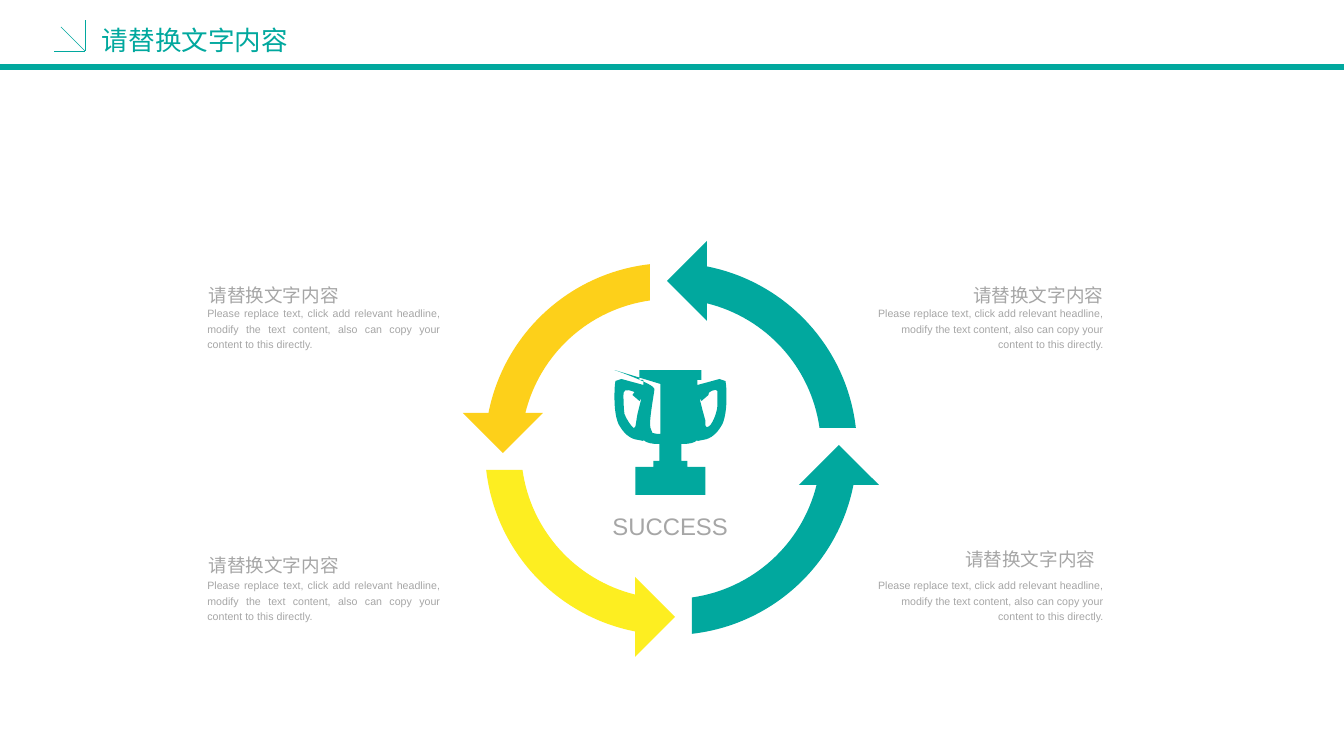
from dataclasses import dataclass
from math import acos, asin, cos, sin, tan

from lxml import etree
from pptx import Presentation
from pptx import util as u
from pptx.dml.color import RGBColor
from pptx.enum import shapes, text
from pptx.oxml.ns import qn

PX = 9565  # EMU in one px


@dataclass(frozen=True)
class Theme:
    teal: str = "01A89E"
    yellow: str = "FDEE21"
    amber: str = "FDD01A"
    grey: str = "A6A6A6"
    font: str = "Arial"
    title: int = 20
    label: int = 18
    heading: int = 14
    body: int = 8


T = Theme()
LEFT, RIGHT, JUSTIFY = (text.PP_ALIGN.LEFT, text.PP_ALIGN.RIGHT,
                        text.PP_ALIGN.JUSTIFY)
HEADING = "请替换文字内容"
BODY = ("Please replace text, click add relevant headline, modify the text "
        "content, also can copy your content to this directly.")


def px(n):
    return round(n * PX)


def apply(obj, values):
    for name, value in values.items():
        setattr(obj, name, value)


def add_text(s, box, words, size, color=T.grey, align=LEFT, wrap=True, frame=None):
    tf = s.shapes.add_textbox(*map(px, box)).text_frame
    apply(tf, {"word_wrap": wrap,
               "auto_size": text.MSO_AUTO_SIZE.SHAPE_TO_FIT_TEXT, **(frame or {})})
    p = tf.paragraphs[0]
    apply(p, {"alignment": align, "line_spacing": 1.2})
    r = p.add_run()
    r.text = words
    apply(r.font, {"name": T.font, "size": u.Pt(size)})
    r.font.color.rgb = RGBColor.from_string(color)


def add_line(s, x1, y1, x2, y2, width):
    c = s.shapes.add_connector(shapes.MSO_CONNECTOR.STRAIGHT,
                               *map(px, (x1, y1, x2, y2)))
    c.line.width = u.Pt(width)
    c.line.color.rgb = RGBColor.from_string(T.teal)
    etree.SubElement(c._element.spPr, qn("a:effectLst"))


def add_outline(s, contours, color):
    """Closed contours of (x, y, is_control); two controls bend a segment."""
    fb = None
    for contour in contours:
        first, *rest = [(px(x), px(y)) for x, y, _ in contour]
        if fb is None:
            fb = s.shapes.build_freeform(*first)
        else:
            fb.move_to(*first)
        fb.add_line_segments(rest)
    sp = fb.convert_to_shape()

    # Join each pair of control points and its end into one curve
    steps = list(sp._element.iter(qn("a:lnTo")))
    flags = [f for c in contours for *_, f in c[1:] + [(0, 0, False)]]
    curve = None
    for step, is_control in zip(steps, flags):
        if is_control and curve is None:
            curve = step
            curve.tag = qn("a:cubicBezTo")
        elif curve is not None:
            curve.append(step[0])
            step.getparent().remove(step)
            if not is_control:
                curve = None

    sp.shadow.inherit = False
    sp.fill.solid()
    sp.fill.fore_color.rgb = RGBColor.from_string(color)
    sp.line.fill.background()


def header(s, x, y, w, h):
    base = y + h - 3
    add_line(s, x, base, x + w, base, 4.5)
    # Corner arrow
    cx, cy = x + 85, y + 51
    for dx, dy in ((-31, 0), (0, -31), (-24, -24)):
        add_line(s, cx, cy, cx + dx, cy + dy, 0.5)
    add_text(s, (x + 92, y + 14, 226, 45), HEADING, T.title, T.teal,
             frame={"auto_size": text.MSO_AUTO_SIZE.NONE,
                    "vertical_anchor": text.MSO_ANCHOR.MIDDLE,
                    "margin_left": px(10), "margin_right": px(10)})


def arc(radius, start, end):
    """One curve along a circle, angles in radians."""
    reach = 4 / 3 * tan((end - start) / 4)

    def point(a, k, is_control):
        return (radius * (cos(a) - k * sin(a)),
                -radius * (sin(a) + k * cos(a)), is_control)

    return [point(start, 0, False), point(start, reach, True),
            point(end, -reach, True), point(end, 0, False)]


def cycle(s, x, y, size):
    """Four arrows, each a quarter turn anticlockwise from the one before."""
    outer = size / 2
    cx, cy, inner = x + outer, y + outer, outer - 36
    middle, half_head, head, tail = 168, 40, 36, 21

    def edge(radius):
        return arc(radius, asin(tail / radius), acos(head / radius))

    arrow = (edge(outer)
             + [(head, -middle - half_head, False), (-4, -middle, False),
                (head, -middle + half_head, False)]
             + edge(inner)[::-1])
    for color in (T.teal, T.amber, T.yellow, T.teal):
        add_outline(s, [[(cx + dx, cy + dy, f) for dx, dy, f in arrow]], color)
        arrow = [(dy, -dx, f) for dx, dy, f in arrow]


def trophy(s, x, y, w):
    cx = x + w / 2
    # Distance from the axis, distance from the top, and 1 for a control
    side = [(31, 0), (31, 10), (27, 10), (27, 15), (49, 9), (55, 11),
            (56, 16, 1), (56, 22, 1), (56, 28), (56, 37, 1), (55, 47, 1),
            (52, 54), (47, 63, 1), (41, 69, 1), (32, 70), (27, 71), (27, 70),
            (24, 73, 1), (19, 74, 1), (11, 74), (11, 91), (17, 91), (17, 97),
            (35, 97), (35, 125)]
    handle = [(29, 28), (32, 40, 1), (35, 51, 1), (34, 59), (31 + 6, 58, 1),
              (40, 55, 1), (43, 51), (46, 44, 1), (47, 36, 1), (47, 28),
              (47, 25, 1), (47, 21, 1), (46, 18), (36, 22), (38, 25), (31, 31)]
    shine = [(10, 14), (10, 64), (13, 64, 1), (18, 63, 1), (20, 58),
             (22, 52, 1), (16, 22, 1), (16, 19), (16, 14)]

    def place(points, sign):
        return [(cx + sign * d, y + dy, bool(f)) for d, dy, *f in points]

    add_outline(s, [place(side, -1) + place(side, 1)[::-1],
                    place(handle, -1), place(handle, 1), place(shine, -1)], T.teal)


def caption(s, x, y, w, h, on_right, rise, inset):
    """Heading above a paragraph, both on the outer side of the box."""
    head_w = 150
    head_x = x + w - head_w - inset if on_right else x + inset
    add_text(s, (head_x, y - rise, head_w, 34), HEADING, T.heading,
             align=RIGHT if on_right else LEFT, wrap=False)
    add_text(s, (x, y, w, h), BODY, T.body, align=RIGHT if on_right else JUSTIFY)


def main():
    prs = Presentation()
    apply(prs, {"slide_width": px(1344), "slide_height": px(756)})
    s = prs.slides.add_slide(prs.slide_layouts[6])

    header(s, 0, 0, 1344, 70)

    # Cycle with its centre
    cycle(s, 485, 263, 372)
    trophy(s, 615, 370, 111)
    add_text(s, (603, 501, 136, 41), "SUCCESS", T.label, align=JUSTIFY, wrap=False)

    # Captions on both sides
    for x, y, w, on_right, rise, inset in (
            (198, 300, 252, False, 25, 1), (198, 572, 252, False, 27, 1),
            (867, 572, 246, True, 33, 8), (867, 300, 246, True, 25, 0)):
        caption(s, x, y, w, 54, on_right, rise, inset)

    prs.save("out.pptx")


if __name__ == "__main__":
    main()
